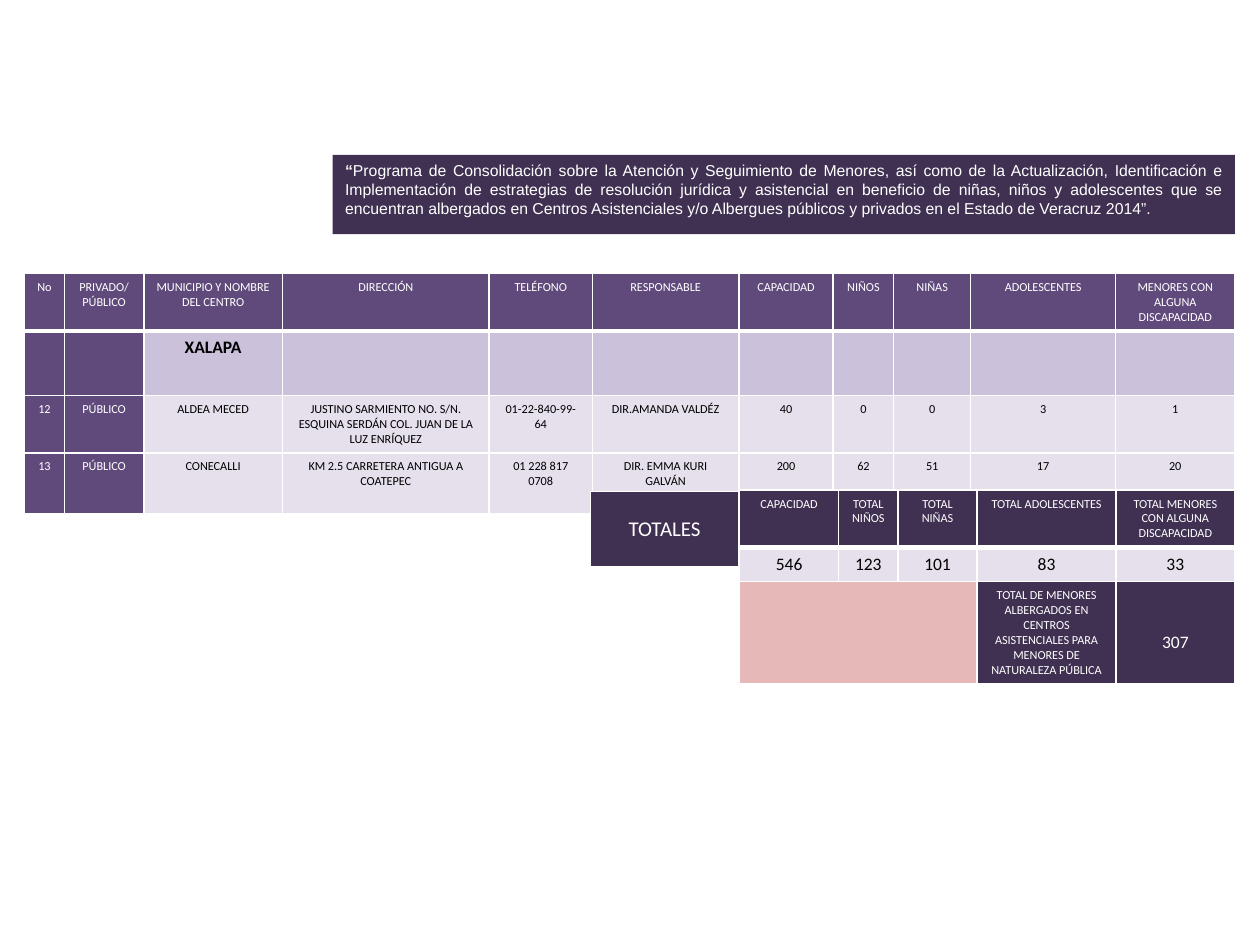
import pptx
import pptx.dml.color
import pptx.enum.dml
import pptx.enum.text
import pptx.oxml
import pptx.oxml.ns
import pptx.util

Pt = pptx.util.Pt
ALIGN = pptx.enum.text.PP_ALIGN
ANCHOR = pptx.enum.text.MSO_ANCHOR

theme = {
    "dark": "403152", "purple": "604A7B", "lilac": "CCC1DA", "pale": "E6E0EC",
    "pink": "E6B9B8", "white": "FFFFFF", "black": "000000",
    "body": "Calibri", "heading": "Arial",
    "small": 7, "banner": 9, "figure": 10, "totals": 12,
}


def color(name):
    return pptx.dml.color.RGBColor.from_string(theme[name])


def add_grid(page, left, top, widths, heights, rows):
    """Add a table; each cell is (text, fill, text colour, size, bold)."""
    table = page.shapes.add_table(len(rows), len(widths), Pt(left), Pt(top),
                                  Pt(sum(widths)), Pt(sum(heights))).table
    for column, width in zip(table.columns, widths):
        column.width = Pt(width)
    for row, height in zip(table.rows, heights):
        row.height = Pt(height)
    for r, row in enumerate(rows):
        for c, (text, fill, ink, size, bold) in enumerate(row):
            cell = table.cell(r, c)
            properties = cell._tc.get_or_add_tcPr()
            for side in "LRTB":
                weight = 3 if side == "B" and r == 0 else 1
                properties.append(pptx.oxml.parse_xml(
                    f'<a:ln{side} {pptx.oxml.ns.nsdecls("a")} w="{Pt(weight)}"><a:solidFill>'
                    f'<a:srgbClr val="{theme["white"]}"/></a:solidFill></a:ln{side}>'))
            cell.fill.solid()
            cell.fill.fore_color.rgb = color(fill)
            para = cell.text_frame.paragraphs[0]
            para.text = text
            para.alignment = ALIGN.CENTER
            para.font.name = theme["body"]
            para.font.size = Pt(theme[size])
            para.font.bold = bold
            para.font.color.rgb = color(ink)
    return table


deck = pptx.Presentation()
deck.slide_width, deck.slide_height = Pt(720), Pt(540)
page = deck.slides.add_slide(deck.slide_layouts[5])

# Programme banner
banner = page.shapes.title
banner.left, banner.top, banner.width, banner.height = Pt(190), Pt(88.5), Pt(515.6), Pt(45.3)
banner.fill.solid()
banner.fill.fore_color.rgb = color("dark")
frame = banner.text_frame
frame.word_wrap = True
frame.auto_size = pptx.enum.text.MSO_AUTO_SIZE.NONE
frame.vertical_anchor = ANCHOR.TOP
para = frame.paragraphs[0]
para.alignment = ALIGN.JUSTIFY
para.font.name = theme["heading"]
para.font.size = Pt(theme["banner"])
para.font.color.rgb = color("white")
quote = para.add_run()
quote.text = "“"
quote.font.bold = True
span = para.add_run()
span.text = (
    "Programa de Consolidación sobre la Atención y Seguimiento de Menores, así como de la "
    "Actualización, Identificación e Implementación de estrategias de resolución jurídica y "
    "asistencial en beneficio de niñas, niños y adolescentes que se encuentran albergados en "
    "Centros Asistenciales y/o Albergues públicos y privados en el Estado de Veracruz 2014”.")

# Table of centres
headings = ["No", "PRIVADO/PÚBLICO", "MUNICIPIO Y NOMBRE DEL CENTRO", "DIRECCIÓN", "TELÉFONO",
            "RESPONSABLE", "CAPACIDAD", "NIÑOS", "NIÑAS", "ADOLESCENTES",
            "MENORES CON ALGUNA DISCAPACIDAD"]
centres = [
    ["12", "PÚBLICO", "ALDEA MECED",
     "JUSTINO SARMIENTO NO. S/N. ESQUINA SERDÁN COL. JUAN DE LA LUZ ENRÍQUEZ",
     "01-22-840-99-64", "DIR.AMANDA VALDÉZ", "40", "0", "0", "3", "1"],
    ["13", "PÚBLICO", "CONECALLI", "KM 2.5 CARRETERA ANTIGUA A COATEPEC",
     "01 228 817 0708", "DIR. EMMA KURI GALVÁN", "200", "62", "51", "17", "20"],
]
town = ["", "", "XALAPA"] + [""] * 8
rows = [[(text, "purple", "white", "small", False) for text in headings]]
for values, fill, size, bold in [(town, "lilac", "figure", True),
                                 (centres[0], "pale", "small", False),
                                 (centres[1], "pale", "small", False)]:
    rows.append([(text, "purple", "white", "small", False) if c < 2
                 else (text, fill, "black", size, bold) for c, text in enumerate(values)])
add_grid(page, 14, 156.4,
         [22.8, 45.4, 79.2, 118.2, 58.9, 83.8, 53.9, 34.6, 44, 82.8, 68.2],
         [32.4, 36.7, 32.4, 34.6], rows)

# Totals by group
labels = ["CAPACIDAD", "TOTAL NIÑOS", "TOTAL NIÑAS", "TOTAL ADOLESCENTES",
          "TOTAL MENORES CON ALGUNA DISCAPACIDAD"]
closing = "TOTAL DE MENORES ALBERGADOS EN CENTROS ASISTENCIALES PARA MENORES DE NATURALEZA PÚBLICA"
totals = add_grid(
    page, 422.5, 280.1, [56.8, 33.8, 45.3, 79.3, 67.9], [32.4, 19.4, 57.8],
    [[(text, "dark", "white", "small", False) for text in labels],
     [(text, "pale", "black", "figure", False) for text in ["546", "123", "101", "83", "33"]],
     [("", "pink", "black", "small", False)] * 3
     + [(closing, "dark", "white", "small", False), ("307", "dark", "white", "figure", False)]])
totals.cell(2, 0).merge(totals.cell(2, 2))
totals.cell(2, 4).margin_top = Pt(28.8)

# Totals label
label = add_grid(page, 337.3, 280.8, [85], [43.9],
                 [[("TOTALES", "dark", "white", "totals", False)]])
label.cell(0, 0).vertical_anchor = ANCHOR.MIDDLE

deck.save("out.pptx")
